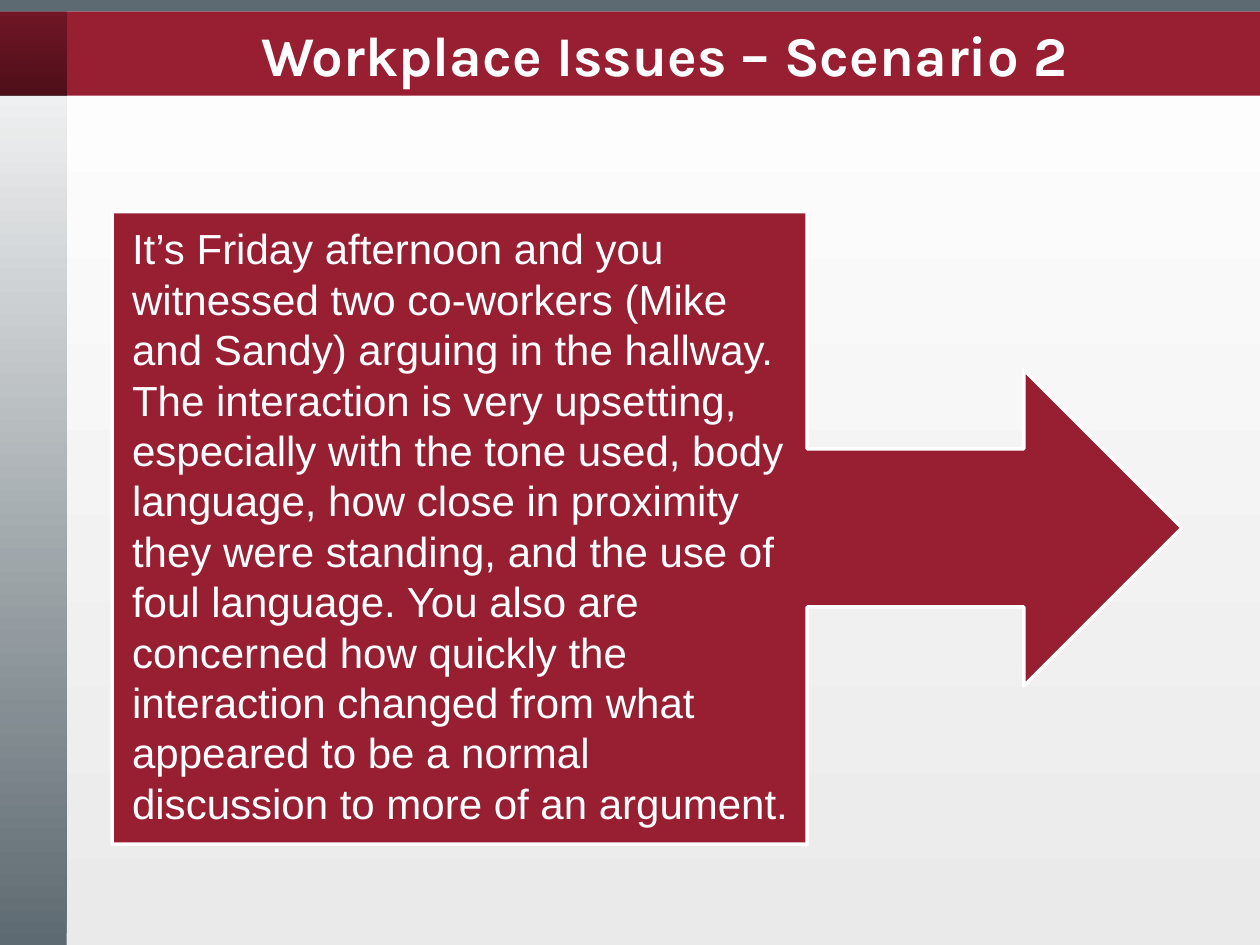
"""Build the workplace issues scenario slide with its arrow callout."""
from lxml.etree import SubElement
from pptx import Presentation
from pptx.dml.color import RGBColor
from pptx.enum.shapes import MSO_SHAPE as Shape
from pptx.enum.text import MSO_AUTO_SIZE as AutoSize, PP_ALIGN as Align
from pptx.oxml.ns import qn
from pptx.util import Inches, Pt

CRIMSON = RGBColor(0x98, 0x1E, 0x32)
SLATE = RGBColor(0x5E, 0x6A, 0x71)
PALE = RGBColor(0xEA, 0xEA, 0xEA)
WHITE = RGBColor(0xFF, 0xFF, 0xFF)
BLACK = RGBColor(0x00, 0x00, 0x00)

TITLE = "Workplace Issues – Scenario 2"
SCENARIO = (
    "It’s Friday afternoon and you witnessed two co-workers (Mike and Sandy) "
    "arguing in the hallway. The interaction is very upsetting, especially with "
    "the tone used, body language, how close in proximity they were standing, "
    "and the use of foul language. You also are concerned how quickly the "
    "interaction changed from what appeared to be a normal discussion to more "
    "of an argument."
)


def fade_upward(fill, bottom, top):
    fill.gradient()
    fill.gradient_angle = 90
    for stop, color, position in zip(fill.gradient_stops, (bottom, top), (0, 1)):
        stop.color.rgb = color
        stop.position = position


def add_block(page, preset, left, top, width, height, color):
    block = page.shapes.add_shape(
        preset, Inches(left), Inches(top), Inches(width), Inches(height))
    block.shadow.inherit = False
    block.fill.solid()
    block.fill.fore_color.rgb = color
    block.line.fill.background()
    return block


deck = Presentation()
deck.slide_width, deck.slide_height = Inches(10), Inches(7.5)
page = deck.slides.add_slide(deck.slide_layouts[6])
fade_upward(page.background.fill, PALE, WHITE)

side_strip = add_block(page, Shape.RECTANGLE, 0, 0, 0.53, 7.5, SLATE)
fade_upward(side_strip.fill, SLATE, WHITE)

add_block(page, Shape.RECTANGLE, 0, 0.09, 10, 0.67, CRIMSON)

corner_shade = add_block(page, Shape.RECTANGLE, -0.02, 0.09, 0.55, 0.67, BLACK)
fade_upward(corner_shade.fill, BLACK, BLACK)
shade_colors = corner_shade.element.spPr.iter(qn("a:srgbClr"))
for color, opacity in zip(shade_colors, (50, 25)):
    SubElement(color, qn("a:alpha"), val=str(opacity * 1000))

add_block(page, Shape.RECTANGLE, -0.02, 0, 10.02, 0.09, SLATE)

callout = add_block(page, Shape.RIGHT_ARROW_CALLOUT, 0.89, 1.68, 8.49, 5.02, CRIMSON)
callout.line.color.rgb = WHITE
callout.line.width = Pt(2)

texts = [
    (TITLE, (0.55, 0.17, 9.45, 0.59), "Karla", 32, True, Align.CENTER, 0.9),
    (SCENARIO, (0.95, 1.72, 5.42, 5.25), "Arial", 24, False, Align.LEFT, 1.0),
]
for words, place, font, size, bold, align, spacing in texts:
    box = page.shapes.add_textbox(*map(Inches, place))
    box.text_frame.word_wrap = True
    box.text_frame.auto_size = AutoSize.SHAPE_TO_FIT_TEXT
    para = box.text_frame.paragraphs[0]
    para.alignment = align
    para.line_spacing = spacing
    span = para.add_run()
    span.text = words
    span.font.name = font
    span.font.size = Pt(size)
    span.font.bold = bold
    span.font.color.rgb = WHITE

deck.save("out.pptx")
